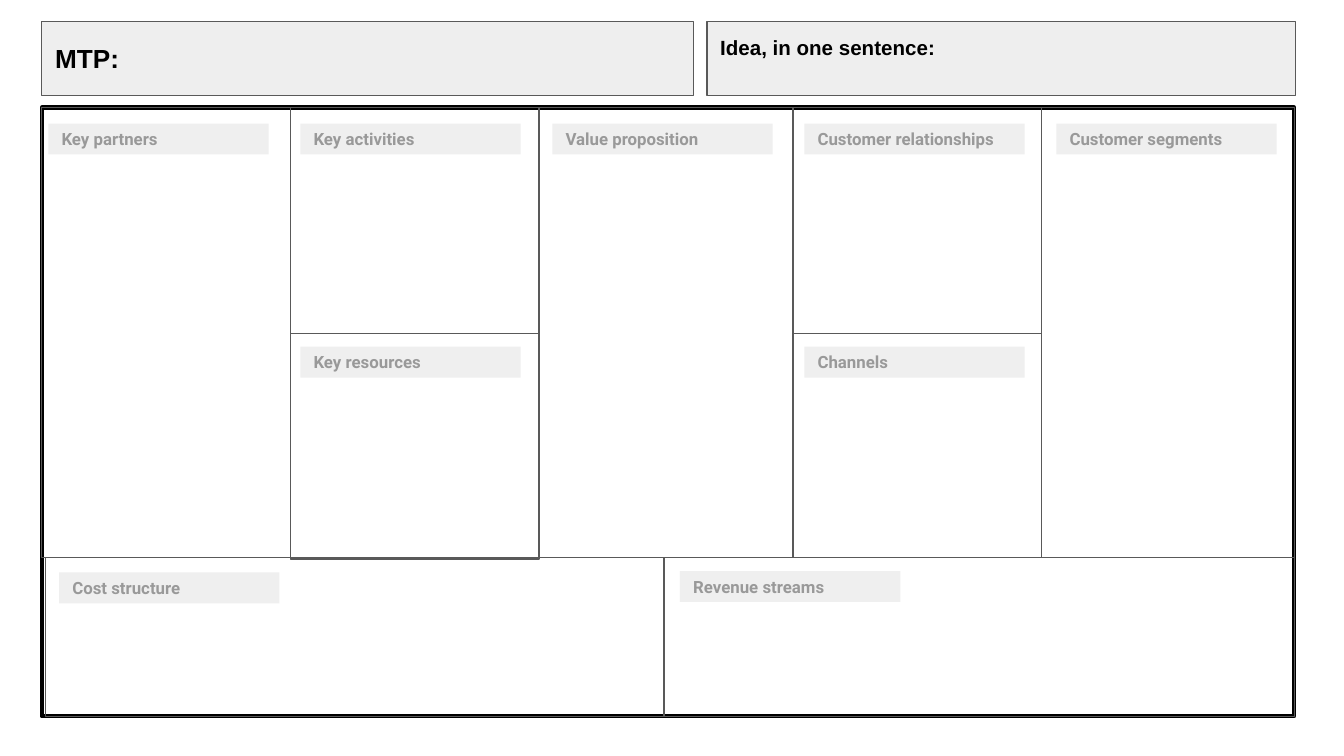
from dataclasses import dataclass

from pptx import Presentation
from pptx.dml.color import RGBColor
from pptx.enum.shapes import MSO_SHAPE
from pptx.enum.text import MSO_ANCHOR, MSO_AUTO_SIZE, PP_ALIGN
from pptx.util import Inches, Pt


@dataclass(frozen=True)
class Theme:
    """Colours, fonts and sizes of the canvas."""
    header_fill: str = "EEEEEE"
    label_fill: str = "EFEFEF"
    label_text: str = "999999"
    line: str = "595959"
    black: str = "000000"
    header_font: str = "Arial"
    label_font: str = "Roboto"
    title_size: float = 14
    idea_size: float = 11
    label_size: float = 9
    thin: float = 0.75
    thick: float = 2.25


THEME = Theme()
LABEL_SIZE = (1.64, 0.23)
LABEL_PITCH = 7.5 / 4
CELLS = [
    (0.03, 3.35, 4.6, 1.18),
    (4.63, 3.35, 4.69, 1.18),
    (3.7, 0, 1.89, 3.35),
    (7.44, 0, 1.88, 3.35),
    (0, 0, 1.85, 3.35),
    (1.85, 0, 1.85, 1.68),
    (5.59, 0, 1.85, 1.68),
    (1.85, 1.68, 1.85, 1.68),
    (5.59, 1.68, 1.85, 1.67),
]
COLUMN_LABELS = [
    ("Key partners",),
    ("Key activities", "Key resources"),
    ("Value proposition",),
    ("Customer relationships", "Channels"),
    ("Customer segments",),
]
BOTTOM_LABELS = [("Cost structure", 0.13, 3.46), ("Revenue streams", 4.75, 3.45)]


def style_box(sp, fill=None, line=None, width=THEME.thin):
    """Set the fill and outline of a shape."""
    if fill:
        sp.fill.solid()
        sp.fill.fore_color.rgb = RGBColor.from_string(fill)
    else:
        sp.fill.background()
    if line:
        sp.line.color.rgb = RGBColor.from_string(line)
        sp.line.width = Pt(width)
    else:
        sp.line.fill.background()


def add_box(shapes, box, **style):
    """Add a styled rectangle without a shadow."""
    sp = shapes.add_shape(MSO_SHAPE.RECTANGLE, *map(Inches, box))
    sp.shadow.inherit = False
    style_box(sp, **style)
    return sp


def write(sp, text, font, size, color, anchor=MSO_ANCHOR.MIDDLE):
    """Write bold left-aligned text into a shape."""
    tf = sp.text_frame
    tf.word_wrap = True
    tf.auto_size = MSO_AUTO_SIZE.NONE
    tf.vertical_anchor = anchor
    tf.margin_left = tf.margin_right = tf.margin_top = tf.margin_bottom = Inches(0.1)
    p = tf.paragraphs[0]
    p.alignment = PP_ALIGN.LEFT
    r = p.add_run()
    r.text = text
    r.font.name = font
    r.font.size = Pt(size)
    r.font.bold = True
    r.font.color.rgb = RGBColor.from_string(color)


def add_header(s, left, top, width, height):
    """Place the title and the idea box side by side."""
    title_width, idea_width = 4.85, 4.38
    title = s.shapes.title
    title.left, title.top = Inches(left), Inches(top)
    title.width, title.height = Inches(title_width), Inches(height)
    style_box(title, fill=THEME.header_fill, line=THEME.line)
    write(title, "MTP:", THEME.header_font, THEME.title_size, THEME.black)
    idea = add_box(s.shapes, (left + width - idea_width, top, idea_width, height),
                   fill=THEME.header_fill, line=THEME.line)
    write(idea, "Idea, in one sentence:", THEME.header_font, THEME.idea_size,
          THEME.black, anchor=MSO_ANCHOR.TOP)


def add_label(s, text, left, top):
    """Add the grey heading of one cell."""
    sp = add_box(s.shapes, (left, top, *LABEL_SIZE), fill=THEME.label_fill)
    write(sp, text, THEME.label_font, THEME.label_size, THEME.label_text)


def add_canvas(s, left, top, width, height):
    """Place the headings, the outer frame and the cells."""
    for col, names in enumerate(COLUMN_LABELS):
        for row, name in enumerate(names):
            add_label(s, name, left + 0.05 + col * LABEL_PITCH, top + 0.12 + row * 1.66)
    for name, x, y in BOTTOM_LABELS:
        add_label(s, name, left + x, top + y)
    frame = s.shapes.add_group_shape()
    add_box(frame.shapes, (left, top, width, height), line=THEME.black, width=THEME.thick)
    for x, y, w, h in CELLS:
        add_box(frame.shapes, (left + x, top + y, w, h), line=THEME.line)


def main():
    """Build and save the canvas slide."""
    prs = Presentation()
    prs.slide_width = Inches(10)
    prs.slide_height = prs.slide_width * 9 // 16
    s = prs.slides.add_slide(prs.slide_layouts[5])
    add_header(s, 0.31, 0.16, 9.33, 0.55)
    add_canvas(s, 0.31, 0.8, 9.32, 4.53)
    prs.save("out.pptx")


if __name__ == "__main__":
    main()
